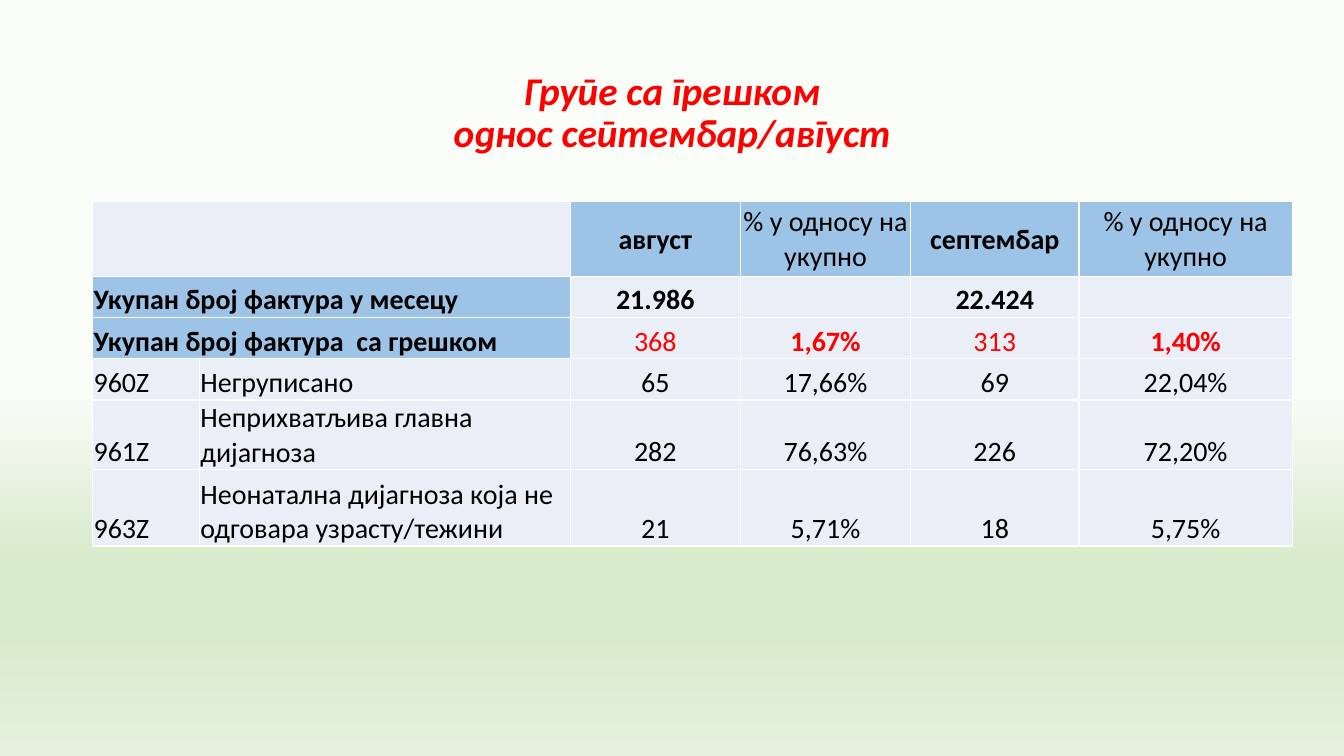
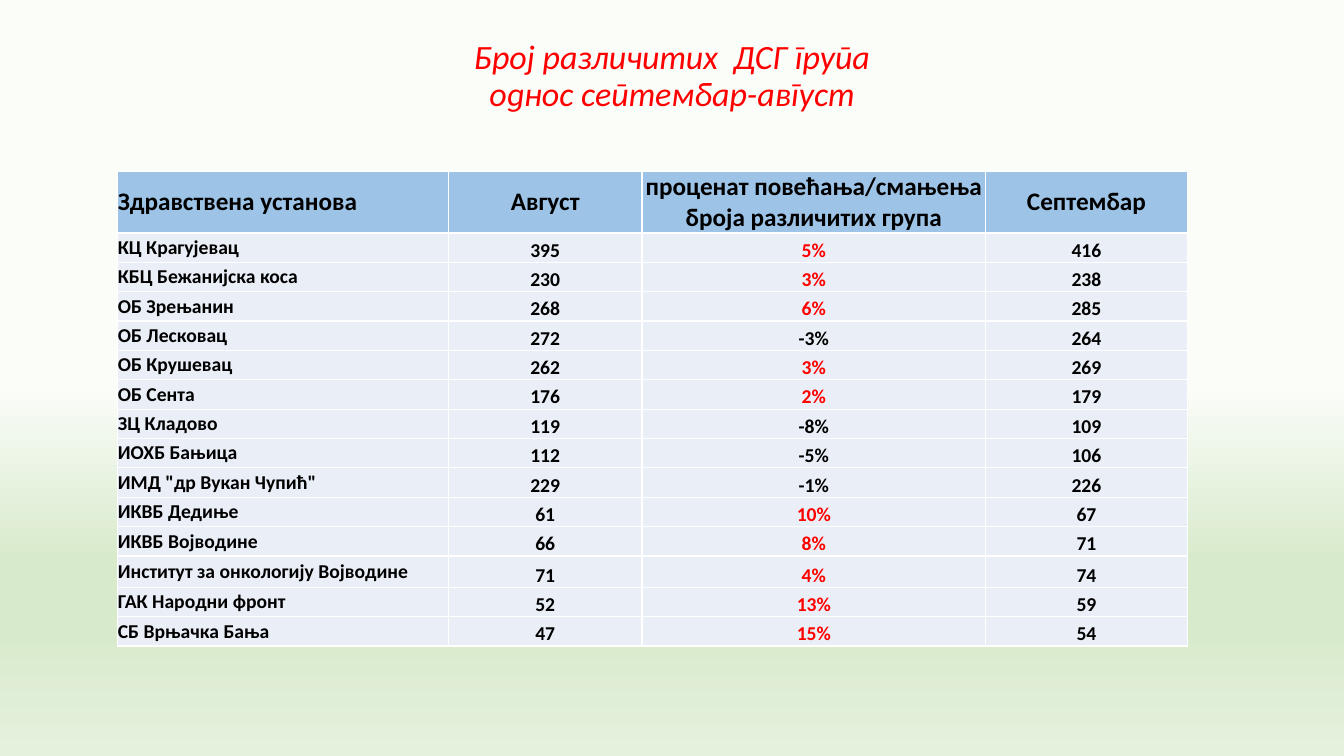
from lxml import etree
from pptx import Presentation
from pptx.dml.color import RGBColor
from pptx.enum import lang, text
from pptx.oxml.ns import qn
from pptx.util import Cm, Pt

FONT = "Calibri"
RED = RGBColor(0xFF, 0x00, 0x00)
BLACK = RGBColor(0x00, 0x00, 0x00)
WHITE = RGBColor(0xFF, 0xFF, 0xFF)
BLUE = RGBColor(0x9D, 0xC3, 0xE6)
PALE = RGBColor(0xEA, 0xEF, 0xF7)
BACKGROUND_STOPS = [
    (51, RGBColor(0xFB, 0xFD, 0xF9)),
    (74, RGBColor(0xD8, 0xEA, 0xCC)),
    (83, RGBColor(0xD8, 0xEA, 0xCC)),
    (100, RGBColor(0xE5, 0xF1, 0xDD)),
]

LEFT, CENTER = text.PP_ALIGN.LEFT, text.PP_ALIGN.CENTER
TOP, MIDDLE, BOTTOM = (text.MSO_ANCHOR.TOP, text.MSO_ANCHOR.MIDDLE,
                       text.MSO_ANCHOR.BOTTOM)

ERROR_TITLE = "Групе са грешком\vоднос септембар/август"
ERROR_COLUMNS = [2.69, 9.35, 4.29, 4.29, 4.24, 5.38]
ERROR_HEIGHTS = [1.88, 1.04, 1.04, 1.04, 1.75, 1.93]
ERROR_ROWS = [
    ("", "", "август", "% у односу на укупно", "септембар", "% у односу на укупно"),
    ("Укупан број фактура у месецу", "", "21.986", "", "22.424", ""),
    ("Укупан број фактура  са грешком", "", "368", "1,67%", "313", "1,40%"),
    ("960Z", "Негруписано", "65", "17,66%", "69", "22,04%"),
    ("961Z", "Неприхватљива главна дијагноза", "282", "76,63%", "226", "72,20%"),
    ("963Z", "Неонатална дијагноза која не одговара узрасту/тежини",
     "21", "5,71%", "18", "5,75%"),
]

GROUP_TITLE = "Број различитих  ДСГ група\vоднос септембар-август"
GROUP_COLUMNS = [8.33, 4.88, 8.66, 5.08]
GROUP_HEIGHTS = [1.55] + [0.74] * 11 + [0.79] + [0.74] * 2
GROUP_ROWS = [
    ("Здравствена установа", "Август",
     "проценат повећања/смањења броја различитих група", "Септембар"),
    ("КЦ Крагујевац", "395", "5%", "416"),
    ("КБЦ Бежанијска коса", "230", "3%", "238"),
    ("ОБ Зрењанин", "268", "6%", "285"),
    ("ОБ Лесковац", "272", "-3%", "264"),
    ("ОБ Крушевац", "262", "3%", "269"),
    ("ОБ Сента", "176", "2%", "179"),
    ("ЗЦ Кладово", "119", "-8%", "109"),
    ("ИОХБ Бањица", "112", "-5%", "106"),
    ('ИМД "др Вукан Чупић"', "229", "-1%", "226"),
    ("ИКВБ Дедиње", "61", "10%", "67"),
    ("ИКВБ Војводине", "66", "8%", "71"),
    ("Институт за онкологију Војводине", "71", "4%", "74"),
    ("ГАК Народни фронт", "52", "13%", "59"),
    ("СБ Врњачка Бања", "47", "15%", "54"),
]


def write(frame, words, size, color=BLACK, bold=False, italic=False,
          align=LEFT, before=0, spacing=1.0):
    para = frame.paragraphs[0]
    para.text = words
    para.alignment = align
    para.space_before = Pt(before)
    para.line_spacing = spacing
    para.font.size = Pt(size)
    for span in para.runs:
        font = span.font
        font.name, font.size = FONT, Pt(size)
        font.bold, font.italic = bold, italic
        font.color.rgb = color
        font.language_id = lang.MSO_LANGUAGE_ID.SERBIAN_CYRILLIC


def paint_background(master):
    fill = master.background.fill
    fill.gradient()
    fill.gradient_angle = 270
    stops = next(master.element.iter(qn("a:gsLst")))
    for stop in list(stops):
        stops.remove(stop)
    for percent, color in BACKGROUND_STOPS:
        stop = etree.SubElement(stops, qn("a:gs"), pos=str(percent * 1000))
        etree.SubElement(stop, qn("a:srgbClr"), val=str(color))


def add_title(page, words, height, anchor, **style):
    box = page.shapes.add_textbox(Cm(2.33), Cm(1.02), Cm(29.21), Cm(height))
    frame = box.text_frame
    frame.word_wrap = True
    frame.margin_top = frame.margin_bottom = 0
    frame.vertical_anchor = anchor
    write(frame, words, color=RED, italic=True, align=CENTER, spacing=0.9, **style)


def add_borders(frame):
    for properties in frame.element.iter(qn("a:tcPr")):
        for place, side in enumerate(("lnL", "lnR", "lnT", "lnB")):
            line = etree.Element(qn("a:" + side), w=str(Pt(1)))
            solid = etree.SubElement(line, qn("a:solidFill"))
            etree.SubElement(solid, qn("a:srgbClr"), val=str(WHITE))
            properties.insert(place, line)


def add_grid(page, left, top, rows, widths, heights, style_of, margin=0):
    """Build a table; style_of(row, column, words) gives fill, anchor and text format."""
    frame = page.shapes.add_table(len(rows), len(widths), Cm(left), Cm(top),
                                  Cm(sum(widths)), Cm(sum(heights)))
    table = frame.table
    table.first_row = table.horz_banding = False
    for column, width in zip(table.columns, widths):
        column.width = Cm(width)
    for line, height in zip(table.rows, heights):
        line.height = Cm(height)
    for r, row in enumerate(rows):
        for c, words in enumerate(row):
            cell = table.cell(r, c)
            fill, anchor, style = style_of(r, c, words)
            cell.margin_left = cell.margin_right = cell.margin_top = Cm(margin)
            cell.margin_bottom = 0
            cell.vertical_anchor = anchor
            cell.fill.solid()
            cell.fill.fore_color.rgb = fill
            write(cell.text_frame, words, **style)
    add_borders(frame)
    return table


def error_style(row, column, words):
    label = column < 2
    header = row == 0
    percent = "%" in words
    blue = (header and not label) or (row in (1, 2) and label)
    bold = (header and not percent) or row == 1 or (row == 2 and (label or percent))
    return BLUE if blue else PALE, MIDDLE if header else BOTTOM, dict(
        size=20, bold=bold, color=RED if row == 2 and not label else BLACK,
        align=LEFT if label else CENTER, before=6 if header else 0)


def group_style(row, column, words):
    header = row == 0
    increase = not header and column == 2 and not words.startswith("-")
    return BLUE if header else PALE, MIDDLE if header or column == 0 else BOTTOM, dict(
        size=18 if header else 14, bold=True, color=RED if increase else BLACK,
        align=CENTER if column else LEFT)


def main():
    deck = Presentation()
    deck.slide_width, deck.slide_height = Cm(33.87), Cm(19.05)
    paint_background(deck.slide_master)
    blank = deck.slide_layouts[6]

    page = deck.slides.add_slide(blank)
    add_title(page, ERROR_TITLE, 3.68, MIDDLE, size=28, bold=True)
    table = add_grid(page, 2.33, 5.08, ERROR_ROWS, ERROR_COLUMNS, ERROR_HEIGHTS,
                     error_style, margin=0.03)
    for row in range(3):
        table.cell(row, 0).merge(table.cell(row, 1))

    page = deck.slides.add_slide(blank)
    add_title(page, GROUP_TITLE, 2.79, TOP, size=24.3)
    add_grid(page, 2.97, 4.32, GROUP_ROWS, GROUP_COLUMNS, GROUP_HEIGHTS, group_style)

    deck.save("out.pptx")


if __name__ == "__main__":
    main()
